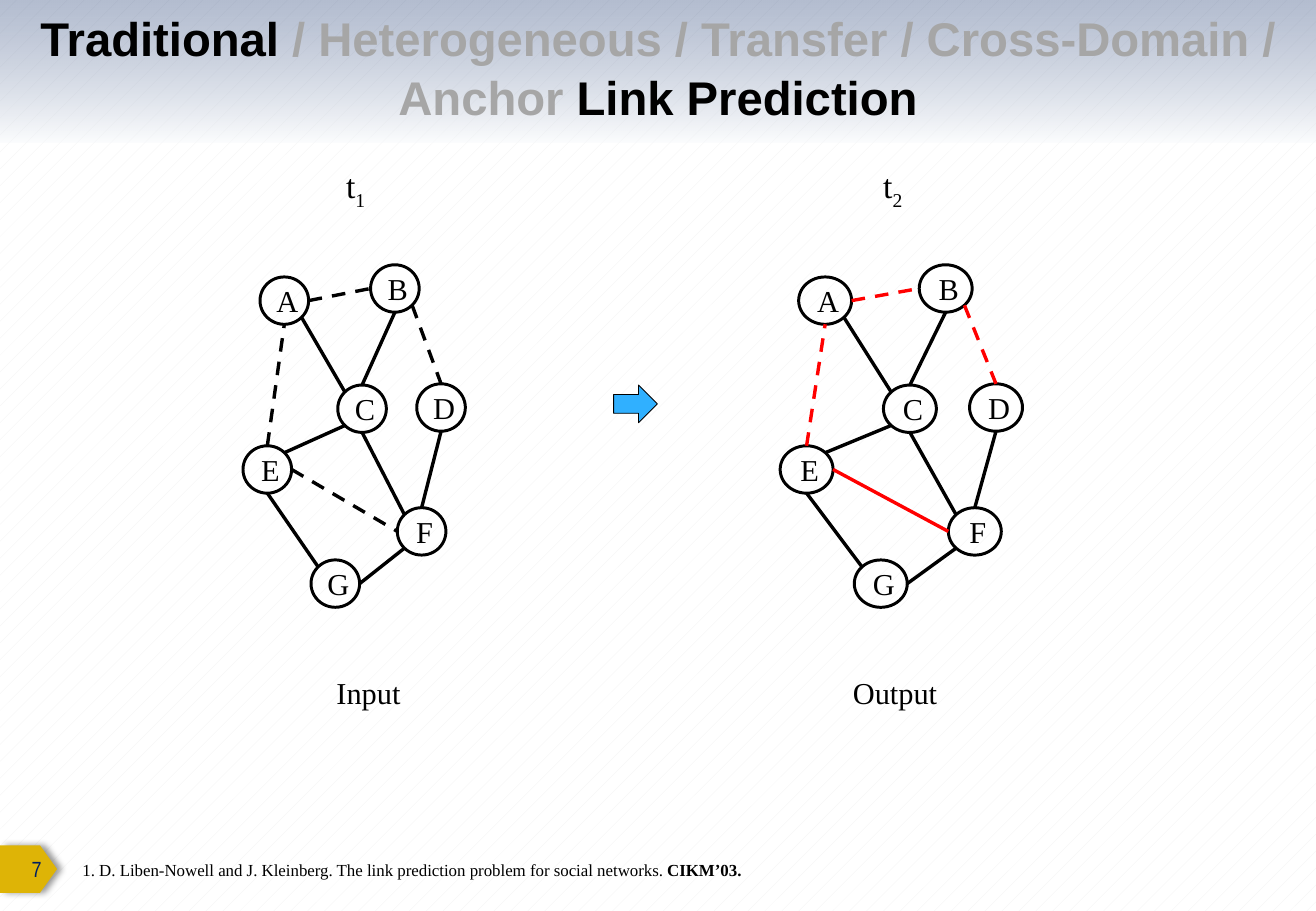
from dataclasses import dataclass

from lxml.etree import SubElement
from pptx import Presentation
from pptx.dml.color import RGBColor
from pptx.enum.dml import MSO_LINE, MSO_PATTERN
from pptx.enum.shapes import MSO_CONNECTOR, MSO_SHAPE
from pptx.enum.text import MSO_ANCHOR, PP_ALIGN
from pptx.oxml.ns import qn
from pptx.util import Inches, Pt


@dataclass(frozen=True)
class Theme:
    black: str = "000000"
    white: str = "FFFFFF"
    muted: str = "A6A6A6"
    new_link: str = "FF0000"
    navy: str = "002060"
    mist: str = "F6F9FC"
    pattern: str = "F2F2F2"
    gold: str = "DEB406"
    sky: str = "30B0FF"
    serif: str = "Times New Roman"
    sans: str = "Arial"
    narrow: str = "Arial Narrow"
    title_size: float = 28
    time_size: float = 20
    label_size: float = 18
    number_size: float = 13
    note_size: float = 10


def apply(target, values):
    for name, value in values.items():
        setattr(target, name, value)


def rgb(color):
    return RGBColor.from_string(color)


class SlideBuilder:
    def __init__(self, slide, theme):
        self.slide = slide
        self.theme = theme

    def background(self):
        fill = self.slide.background.fill
        fill.patterned()
        fill.pattern = MSO_PATTERN.PERCENT_5
        fill.fore_color.rgb = rgb(self.theme.pattern)
        fill.back_color.rgb = rgb(self.theme.white)

    def add_runs(self, shape, runs, size, font=None, align=PP_ALIGN.LEFT,
                 spacing=None, **frame):
        apply(shape.text_frame, {"word_wrap": True, **frame})
        paragraph = shape.text_frame.paragraphs[0]
        apply(paragraph, {"alignment": align, "line_spacing": spacing})
        for text, style in runs:
            run = paragraph.add_run()
            run.text = text
            apply(run.font, {"name": font or self.theme.serif, "size": Pt(size),
                             "bold": style.get("bold", False)})
            run.font.color.rgb = rgb(style.get("color", self.theme.black))
            if style.get("subscript"):
                run._r.get_or_add_rPr().set("baseline", "-25000")

    def text(self, box, runs, size, **options):
        self.add_runs(self.slide.shapes.add_textbox(*map(Inches, box)),
                      runs, size, **options)

    def shape(self, kind, box, fill=None, line_width=None):
        shape = self.slide.shapes.add_shape(kind, *map(Inches, box))
        shape.shadow.inherit = False
        if fill:
            shape.fill.solid()
            shape.fill.fore_color.rgb = rgb(fill)
        else:
            shape.fill.background()
        if line_width:
            shape.line.width = Pt(line_width)
            shape.line.color.rgb = rgb(self.theme.black)
        else:
            shape.line.fill.background()
        return shape

    def header_band(self, box):
        fill = self.shape(MSO_SHAPE.RECTANGLE, box).fill
        fill.gradient()
        fill.gradient_angle = 270
        stops = ((self.theme.navy, 30), (self.theme.mist, 40))
        for stop, (color, opacity) in zip(fill.gradient_stops, stops):
            stop.color.rgb = rgb(color)
            color_node = stop._gs.find(qn("a:srgbClr"))
            SubElement(color_node, qn("a:alpha"), val=str(opacity * 1000))

    def page_tag(self, box):
        tag = self.shape(MSO_SHAPE.PENTAGON, box, self.theme.gold)
        tag.adjustments[0] = 0.36
        effects = tag._element.spPr.find(qn("a:effectLst"))
        shadow = SubElement(effects, qn("a:outerShdw"), blurRad=str(Pt(4)),
                            dist=str(Pt(3)), dir="0", rotWithShape="0")
        color_node = SubElement(shadow, qn("a:srgbClr"), val=self.theme.black)
        SubElement(color_node, qn("a:alpha"), val="40000")

    def node(self, box, name, fill):
        node = self.shape(MSO_SHAPE.OVAL, box, fill, 1.75)
        self.add_runs(node, [(name, {})], self.theme.label_size,
                      align=PP_ALIGN.CENTER, word_wrap=False,
                      vertical_anchor=MSO_ANCHOR.MIDDLE, margin_left=Inches(0.05),
                      margin_right=0, margin_top=0, margin_bottom=0)

    def link(self, start, end, color, dashed):
        link = self.slide.shapes.add_connector(
            MSO_CONNECTOR.STRAIGHT, *map(Inches, (*start, *end)))
        link.line.width = Pt(2)
        link.line.color.rgb = rgb(color)
        if dashed:
            link.line.dash_style = MSO_LINE.DASH
        SubElement(link._element.spPr, qn("a:effectLst"))

    def network(self, left, stretch, link_styles):
        width, height = 0.4 * stretch, 0.39
        corners = {name: (left + x * stretch, y) for name, (x, y) in NODES.items()}
        for name, corner in corners.items():
            self.node((*corner, width, height), name,
                      self.theme.white if name in "BD" else None)

        def rim(name, side):
            across, down = SIDES[side]
            x, y = corners[name]
            return x + width / 2 * (1 + across), y + height / 2 * (1 + down)

        for (start, start_side), (end, end_side) in LINKS:
            color, dashed = link_styles.get(start + end, (self.theme.black, False))
            self.link(rim(start, start_side), rim(end, end_side), color, dashed)


DIAGONAL = 0.71
SIDES = {
    "top": (0, -1), "bottom": (0, 1), "left": (-1, 0), "right": (1, 0),
    "top left": (-DIAGONAL, -DIAGONAL), "top right": (DIAGONAL, -DIAGONAL),
    "bottom left": (-DIAGONAL, DIAGONAL), "bottom right": (DIAGONAL, DIAGONAL),
}
NODES = {
    "B": (1.05, 2.18), "D": (1.43, 3.16), "C": (0.78, 3.17), "A": (0.14, 2.28),
    "E": (0, 3.67), "F": (1.27, 4.18), "G": (0.56, 4.61),
}
LINKS = [
    (("E", "top"), ("A", "bottom")),
    (("E", "bottom"), ("G", "top left")),
    (("B", "bottom"), ("C", "top")),
    (("E", "right"), ("F", "left")),
    (("A", "bottom right"), ("C", "top left")),
    (("G", "right"), ("F", "bottom left")),
    (("F", "top"), ("D", "bottom")),
    (("E", "top right"), ("C", "bottom left")),
    (("A", "right"), ("B", "left")),
    (("C", "bottom"), ("F", "top left")),
    (("B", "bottom right"), ("D", "top")),
]


def main():
    theme = Theme()
    deck = Presentation()
    apply(deck, {"slide_width": Inches(10.83), "slide_height": Inches(7.5)})
    page = SlideBuilder(deck.slides.add_slide(deck.slide_layouts[6]), theme)

    page.background()
    page.page_tag((0, 6.96, 0.47, 0.39))
    page.header_band((0, 0, 10.83, 1.17))
    page.text((0, 6.96, 0.44, 0.38), [("7", {"color": theme.navy})],
              theme.number_size, font=theme.narrow, align=PP_ALIGN.RIGHT,
              vertical_anchor=MSO_ANCHOR.MIDDLE, margin_left=0)
    page.text((0, 0.01, 10.83, 1.06), [
        ("Traditional ", {"bold": True}),
        ("/ Heterogeneous / Transfer / Cross-Domain / Anchor ",
         {"bold": True, "color": theme.muted}),
        ("Link Prediction", {"bold": True}),
    ], theme.title_size, font=theme.sans, align=PP_ALIGN.CENTER, spacing=1.05,
        vertical_anchor=MSO_ANCHOR.MIDDLE)
    page.text((0.58, 7.03, 10.25, 0.27), [
        ("1. D. Liben-Nowell and J. Kleinberg. "
         "The link prediction problem for social networks. ", {}),
        ("CIKM’03.", {"bold": True}),
    ], theme.note_size)

    candidates = ("EA", "AB", "BD")
    unknown = {pair: (theme.black, True) for pair in (*candidates, "EF")}
    predicted = {pair: (theme.new_link, pair in candidates) for pair in unknown}
    stages = [
        ("1", 2.75, "Input", 2.67, 2, 1, unknown),
        ("2", 7.17, "Output", 6.92, 6.42, 1.09, predicted),
    ]
    for step, time_left, caption, caption_left, left, stretch, styles in stages:
        page.network(left, stretch, styles)
        page.text((time_left, 1.31, 0.5, 0.44),
                  [("t", {}), (step, {"subscript": True})], theme.time_size)
        page.text((caption_left, 5.5, 1.25, 0.4), [(caption, {})], theme.label_size)
    page.shape(MSO_SHAPE.RIGHT_ARROW, (5.05, 3.17, 0.36, 0.31), theme.sky, 0.5)

    deck.save("out.pptx")


if __name__ == "__main__":
    main()
